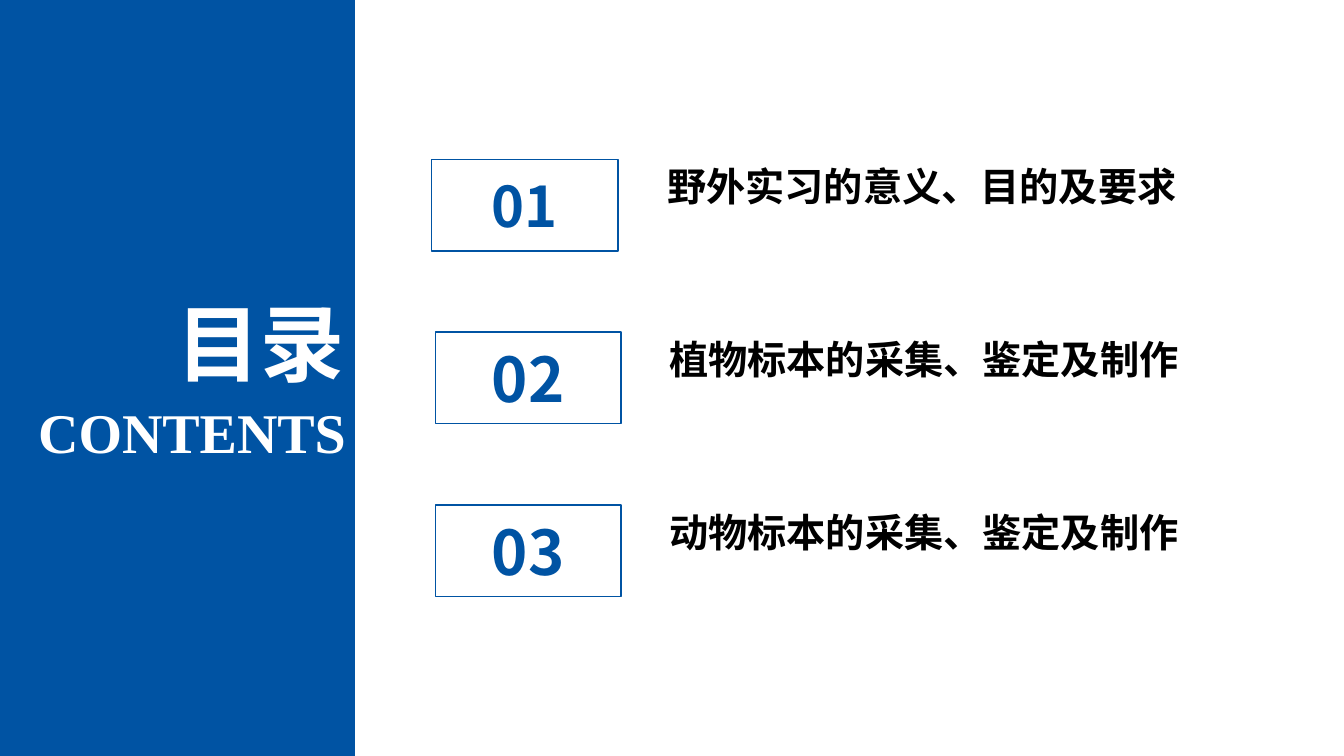
import dataclasses

import pptx
import pptx.dml.color
import pptx.enum.shapes
import pptx.enum.text
import pptx.oxml.ns
import pptx.shapes.autoshape
import pptx.util
from lxml import etree

Inches = pptx.util.Inches
Align = pptx.enum.text.PP_ALIGN

BLUE, WHITE, BLACK = "0053A3", "FFFFFF", "000000"
SANS, SERIF = "Noto Sans CJK SC", "Times New Roman"
FIRST_ROW_TOP, ROW_PITCH = 1.58, 1.715


@dataclasses.dataclass
class Box:
    left: float
    top: float
    width: float
    height: float

    def lengths(self) -> list[int]:
        return [Inches(v) for v in (self.left, self.top, self.width, self.height)]


@dataclasses.dataclass
class Style:
    size: int
    font: str
    color: str
    align: Align = Align.LEFT


@dataclasses.dataclass
class Chapter:
    number: str
    title: str
    frame_left: float
    frame_width: float
    number_size: int
    number_width: float
    number_height: float
    number_drop: float
    title_left: float
    title_width: float
    title_height: float


CHAPTERS = [
    Chapter("01", "野外实习的意义、目的及要求", 4.28, 1.85, 40, 1.85, 0.77, 0.07, 6.52, 5.35, 1.51),
    Chapter("02", "植物标本的采集、鉴定及制作", 4.32, 1.84, 44, 2, 0.84, 0.04, 6.54, 5.32, 1.51),
    Chapter("03", "动物标本的采集、鉴定及制作", 4.32, 1.84, 44, 2, 0.84, 0.04, 6.54, 5.32, 0.57),
]


def rgb(color: str) -> pptx.dml.color.RGBColor:
    return pptx.dml.color.RGBColor.from_string(color)


def add_text(shapes, box: Box, text: str, style: Style) -> None:
    label = shapes.add_textbox(*box.lengths())
    label.text_frame.word_wrap = True
    label.text_frame.text = text
    paragraph = label.text_frame.paragraphs[0]
    paragraph.alignment = style.align
    run = paragraph.runs[0]
    run.font.size = pptx.util.Pt(style.size)
    run.font.name = style.font
    run.font.bold = True
    run.font.color.rgb = rgb(style.color)
    # Chinese glyphs take the East Asian typeface
    east_asian = etree.SubElement(run._r.get_or_add_rPr(), pptx.oxml.ns.qn("a:ea"))
    east_asian.set("typeface", SANS)


def add_rectangle(shapes, box: Box) -> pptx.shapes.autoshape.Shape:
    rectangle = shapes.add_shape(pptx.enum.shapes.MSO_SHAPE.RECTANGLE, *box.lengths())
    rectangle.shadow.inherit = False
    return rectangle


def add_sidebar(shapes) -> None:
    panel = add_rectangle(shapes, Box(0, 0, 3.52, 7.5))
    panel.fill.solid()
    panel.fill.fore_color.rgb = rgb(BLUE)
    panel.line.fill.background()
    add_text(shapes, Box(0.98, 2.84, 2.54, 1.11), "目录", Style(60, SANS, WHITE, Align.RIGHT))
    add_text(shapes, Box(0, 3.89, 3.53, 0.77), "CONTENTS", Style(40, SERIF, WHITE, Align.RIGHT))


def add_chapter(shapes, chapter: Chapter, top: float) -> None:
    entry = shapes.add_group_shape().shapes
    add_text(entry, Box(chapter.title_left, top - 0.02, chapter.title_width, chapter.title_height),
             chapter.title, Style(28, SERIF, BLACK))
    # The number is centred on its frame
    number_left = chapter.frame_left + (chapter.frame_width - chapter.number_width) / 2
    add_text(entry, Box(number_left, top + chapter.number_drop,
                        chapter.number_width, chapter.number_height),
             chapter.number, Style(chapter.number_size, SANS, BLUE, Align.CENTER))
    frame = add_rectangle(entry, Box(chapter.frame_left, top, chapter.frame_width, 0.91))
    frame.fill.background()
    frame.line.color.rgb = rgb(BLUE)
    frame.line.width = pptx.util.Pt(1)


def main() -> None:
    deck = pptx.Presentation()
    deck.slide_width, deck.slide_height = Inches(13.33), Inches(7.5)
    contents = deck.slides.add_slide(deck.slide_layouts[6])

    # Blue panel with the heading
    add_sidebar(contents.shapes)

    # Chapter list
    for row, chapter in enumerate(CHAPTERS):
        add_chapter(contents.shapes, chapter, FIRST_ROW_TOP + row * ROW_PITCH)

    deck.save("out.pptx")


if __name__ == "__main__":
    main()
